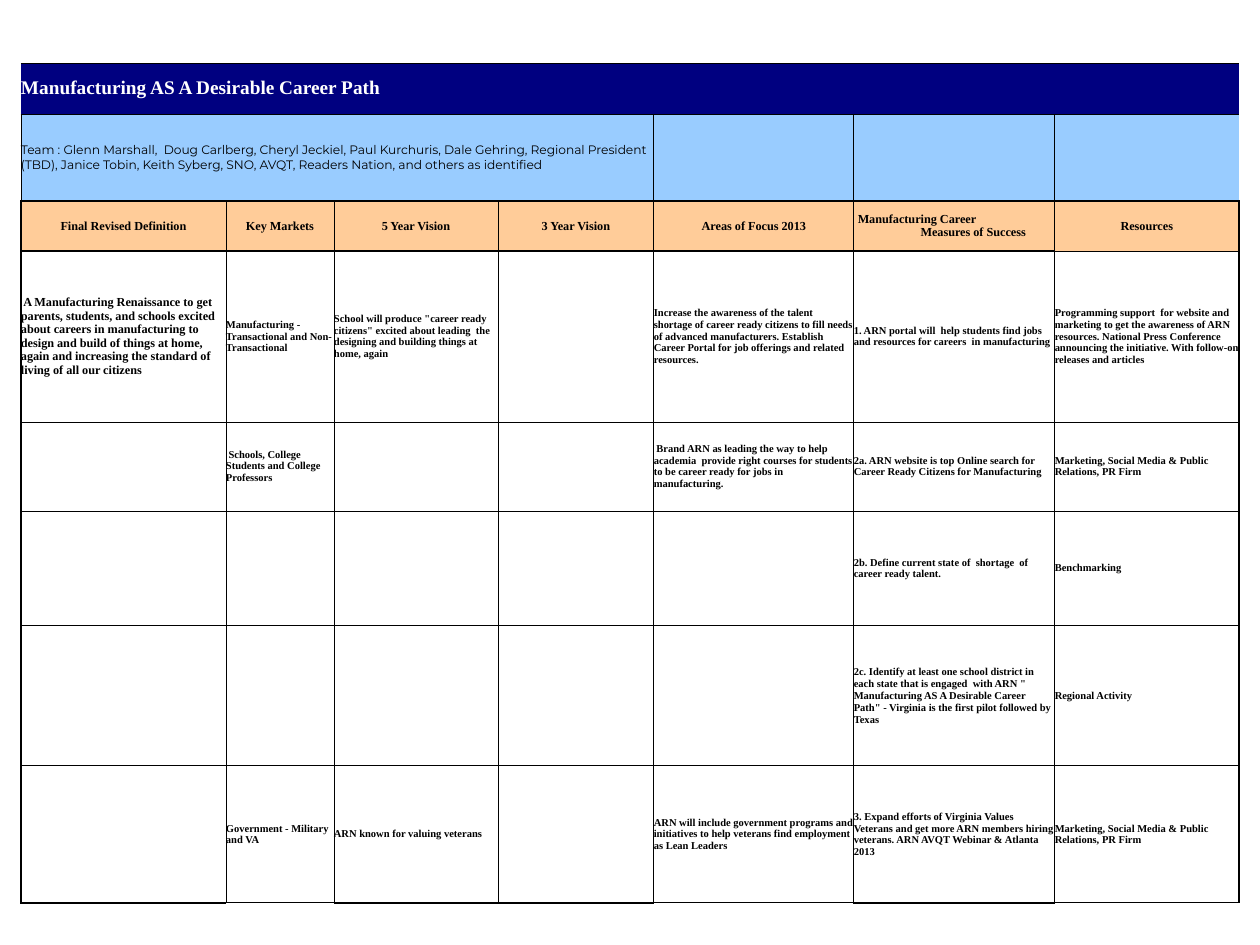
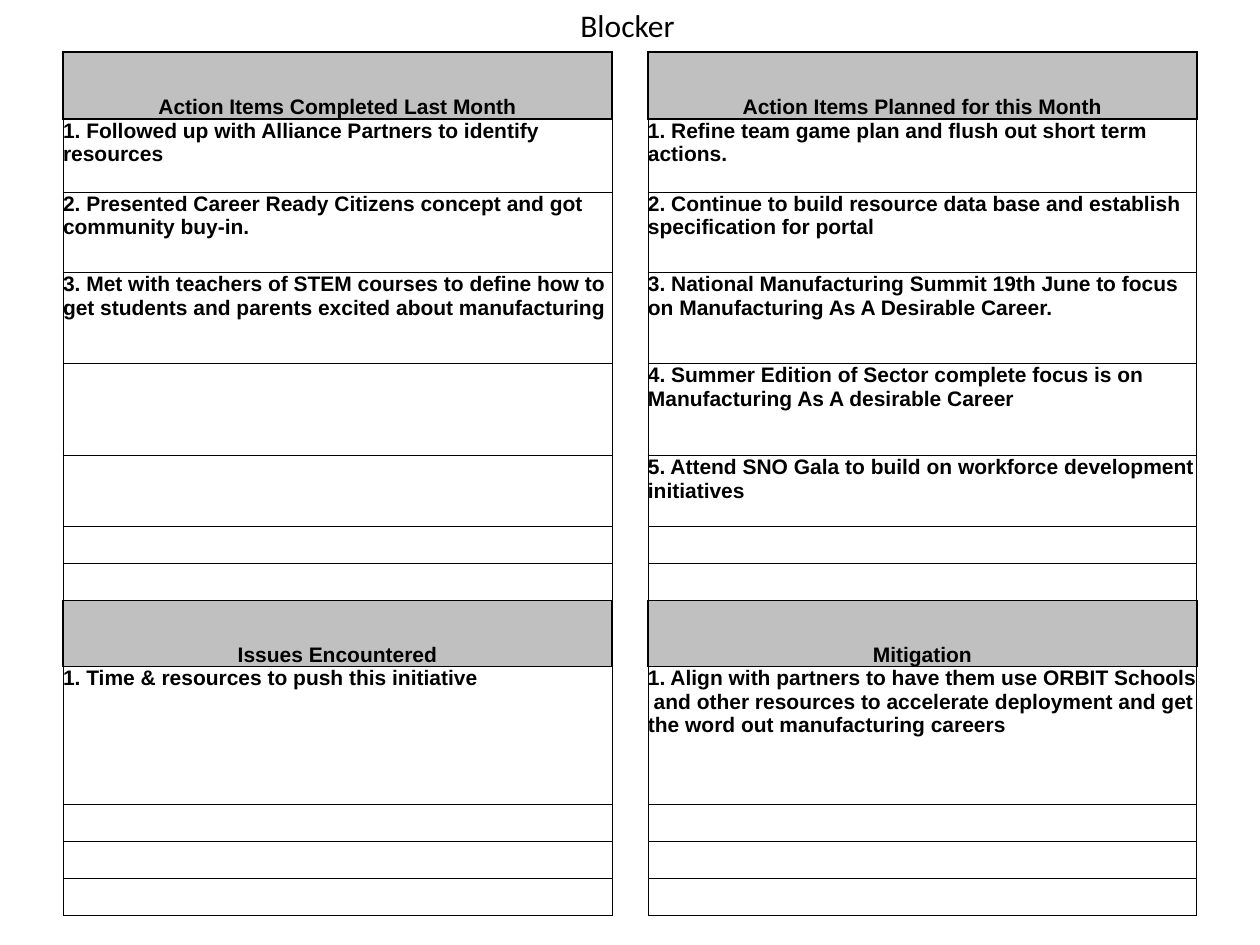
"""Build a two-slide team report: a career path plan and its monthly action items."""
import itertools
from dataclasses import dataclass

import pptx
import pptx.dml.color
import pptx.enum.text
import pptx.oxml
import pptx.util

PX = 914400 // 126
ALIGN = pptx.enum.text.PP_ALIGN
ANCHOR = pptx.enum.text.MSO_ANCHOR


@dataclass(frozen=True)
class Theme:
    black: str = "000000"
    white: str = "FFFFFF"
    navy: str = "000080"
    sky: str = "99CCFF"
    peach: str = "FFCC99"
    gray: str = "C0C0C0"
    serif: str = "Times New Roman"
    sans: str = "Arial"
    team_font: str = "Montserrat"
    title_font: str = "Calibri"
    small: float = 6
    label: float = 7
    heading: float = 11
    action: float = 12
    title: float = 18
    thin: float = 0.5
    thick: float = 1


THEME = Theme()


def write_text(text_frame, text, font=THEME.serif, size=THEME.small, color=THEME.black,
               bold=True, align=ALIGN.LEFT):
    for index, line in enumerate(text.split("\n")):
        paragraph = text_frame.add_paragraph() if index else text_frame.paragraphs[0]
        paragraph.alignment = align
        if not line:
            paragraph._p.get_or_add_endParaRPr().set("sz", str(int(size * 100)))
            continue
        run = paragraph.add_run()
        run.text = line
        run.font.name = font
        run.font.size = pptx.util.Pt(size)
        run.font.bold = bold
        run.font.color.rgb = pptx.dml.color.RGBColor.from_string(color)


def style_cell(cell, fill, anchor, left, right, top, bottom):
    cell.margin_left = cell.margin_right = cell.margin_top = cell.margin_bottom = 0
    cell.vertical_anchor = anchor
    properties = cell._tc.get_or_add_tcPr()
    for side, points in zip("LRTB", (left, right, top, bottom)):
        paint = f'<a:solidFill><a:srgbClr val="{THEME.black}"/></a:solidFill>' if points else "<a:noFill/>"
        properties.append(pptx.oxml.parse_xml(
            f'<a:ln{side} xmlns:a="http://schemas.openxmlformats.org/drawingml/2006/main" '
            f'w="{int(points * 12700)}">{paint}</a:ln{side}>'))
    cell.fill.solid()
    cell.fill.fore_color.rgb = pptx.dml.color.RGBColor.from_string(fill)


presentation = pptx.Presentation()
presentation.slide_width = pptx.util.Inches(10)
presentation.slide_height = pptx.util.Inches(7.5)

grids = [
    ([21, 226, 334, 498, 654, 854, 1055, 1239],
     [63, 114, 201, 251, 422, 511, 626, 766, 903]),
    ([63, 612, 648, 1197],
     [52, 119, 192, 273, 364, 456, 527, 564, 601, 667, 805, 842, 879, 916]),
]
tables = []
for column_edges, row_edges in grids:
    slide = presentation.slides.add_slide(presentation.slide_layouts[6])
    table = slide.shapes.add_table(
        len(row_edges) - 1, len(column_edges) - 1, column_edges[0] * PX, row_edges[0] * PX,
        (column_edges[-1] - column_edges[0]) * PX, (row_edges[-1] - row_edges[0]) * PX).table
    table.first_row = table.horz_banding = False
    for column, (start, end) in zip(table.columns, itertools.pairwise(column_edges)):
        column.width = (end - start) * PX
    for row, (start, end) in zip(table.rows, itertools.pairwise(row_edges)):
        row.height = (end - start) * PX
    tables.append(table)
plan_table, action_table = tables

plan_title = "Manufacturing AS A Desirable Career Path"
team = ("Team : Glenn Marshall,  Doug Carlberg, Cheryl Jeckiel, Paul Kurchuris, Dale Gehring, "
        "Regional President (TBD), Janice Tobin, Keith Syberg, SNO, AVQT, Readers Nation, "
        "and others as identified")
plan_headers = ["Final Revised Definition", "Key Markets", "5 Year Vision", "3 Year Vision",
                "Areas of Focus 2013", "Manufacturing Career\nMeasures of Success", "Resources"]
plan_rows = [
    [" A Manufacturing Renaissance to get parents, students, and schools excited about careers in "
     "manufacturing to  design and build of things at home, again and increasing the standard of "
     "living of all our citizens",
     "Manufacturing - Transactional and Non-Transactional",
     'School will produce "career ready citizens" excited about leading  the designing and '
     "building things at home, again",
     "",
     "Increase the awareness of the talent shortage of career ready citizens to fill needs of "
     "advanced manufacturers. Establish Career Portal for job offerings and related resources.",
     "1. ARN portal will  help students find jobs and resources for careers  in manufacturing",
     "Programming support  for website and marketing to get the awareness of ARN resources. "
     "National Press Conference announcing the initiative. With follow-on releases and articles"],
    ["", " Schools, College Students and College Professors", "", "",
     " Brand ARN as leading the way to help academia  provide right courses for students to be "
     "career ready for jobs in manufacturing.",
     "2a. ARN website is top Online search for Career Ready Citizens for Manufacturing",
     "Marketing, Social Media & Public Relations, PR Firm"],
    ["", "", "", "", "", "2b. Define current state of  shortage  of career ready talent.",
     "Benchmarking"],
    ["", "", "", "", "",
     '2c. Identify at least one school district in each state that is engaged  with ARN " '
     'Manufacturing AS A Desirable Career  Path" - Virginia is the first pilot followed by Texas',
     "Regional Activity"],
    ["", "Government - Military and VA", "ARN known for valuing veterans", "",
     "ARN will include government programs and initiatives to help veterans find employment as "
     "Lean Leaders",
     "3. Expand efforts of Virginia Values Veterans and get more ARN members hiring veterans. "
     "ARN AVQT Webinar & Atlanta 2013",
     "Marketing, Social Media & Public Relations, PR Firm"],
]

plan_table.cell(0, 0).merge(plan_table.cell(0, 2))
plan_table.cell(1, 0).merge(plan_table.cell(1, 3))
plan_content = [[plan_title] + [""] * 6, [team] + [""] * 6, plan_headers] + plan_rows
plan_fills = [THEME.navy, THEME.sky, THEME.peach] + [THEME.white] * len(plan_rows)
plan_formats = {
    0: dict(size=THEME.heading, color=THEME.white),
    1: dict(size=THEME.label, font=THEME.team_font, bold=False),
    2: dict(size=THEME.label, align=ALIGN.CENTER),
}
last_column = len(plan_headers) - 1
last_row = len(plan_content) - 1
thick_foot_columns = (0, 2, 3, 5)
for row_index, texts in enumerate(plan_content):
    for column_index, text in enumerate(texts):
        left = right = top = bottom = THEME.thin
        if row_index == 0:
            left = right = 0
        elif row_index == 1:
            bottom = THEME.thick
            right = 0 if column_index == last_column else THEME.thin
        else:
            left = THEME.thick if column_index == 0 else THEME.thin
            right = THEME.thick if column_index == last_column else THEME.thin
            if row_index == 2:
                top = THEME.thick
            if row_index == 2 and column_index != last_column:
                bottom = THEME.thick
            if row_index == 3 and column_index != last_column:
                top = THEME.thick
            if row_index == last_row and column_index in thick_foot_columns:
                bottom = THEME.thick
        cell = plan_table.cell(row_index, column_index)
        style_cell(cell, plan_fills[row_index], ANCHOR.MIDDLE, left, right, top, bottom)
        is_definition = row_index == 3 and column_index == 0
        text_format = dict(size=THEME.label) if is_definition else plan_formats.get(row_index, {})
        write_text(cell.text_frame, text, **text_format)

measures_cell = plan_table.cell(2, 5)
measures_cell.margin_left = 4 * PX
measures_cell.margin_right = 29 * PX
for paragraph, align in zip(measures_cell.text_frame.paragraphs, (ALIGN.LEFT, ALIGN.RIGHT)):
    paragraph.alignment = align

action_rows = {
    0: ("Action Items Completed Last Month", "Action Items Planned for this Month"),
    1: ("1. Followed up with Alliance Partners to identify resources",
        "1. Refine team game plan and flush out short term actions."),
    2: ("2. Presented Career Ready Citizens concept and got community buy-in.",
        "2. Continue to build resource data base and establish specification for portal"),
    3: ("3. Met with teachers of STEM courses to define how to get students and parents excited "
        "about manufacturing",
        "3. National Manufacturing Summit 19th June to focus on Manufacturing As A Desirable Career."),
    4: ("", "4. Summer Edition of Sector complete focus is on Manufacturing As A desirable Career"),
    5: ("", "5. Attend SNO Gala to build on workforce development initiatives"),
    8: ("Issues Encountered", "Mitigation"),
    9: ("1. Time & resources to push this initiative",
        "1. Align with partners to have them use ORBIT Schools  and other resources to accelerate "
        "deployment and get the word out manufacturing careers"),
}
header_rows = (0, 8)
for row_index in range(len(action_table.rows)):
    is_header = row_index in header_rows
    side = THEME.thick if is_header else THEME.thin
    top = THEME.thick if is_header or row_index - 1 in header_rows else THEME.thin
    bottom = THEME.thick if is_header or row_index + 1 in header_rows else THEME.thin
    completed, planned = action_rows.get(row_index, ("", ""))
    for column_index, text in enumerate((completed, "", planned)):
        is_gap = column_index == 1
        cell = action_table.cell(row_index, column_index)
        style_cell(cell, THEME.gray if is_header and not is_gap else THEME.white,
                   ANCHOR.BOTTOM if is_header else ANCHOR.TOP,
                   side, side, 0 if is_gap else top, 0 if is_gap else bottom)
        write_text(cell.text_frame, text, font=THEME.sans, size=THEME.action,
                   align=ALIGN.CENTER if is_header else ALIGN.LEFT)

title_box = slide.shapes.add_textbox(568 * PX, 0, 121 * PX, 50 * PX)
title_box.text_frame.word_wrap = False
title_box.text_frame.auto_size = pptx.enum.text.MSO_AUTO_SIZE.SHAPE_TO_FIT_TEXT
write_text(title_box.text_frame, "Blocker", font=THEME.title_font, size=THEME.title, bold=False)

presentation.save("out.pptx")
